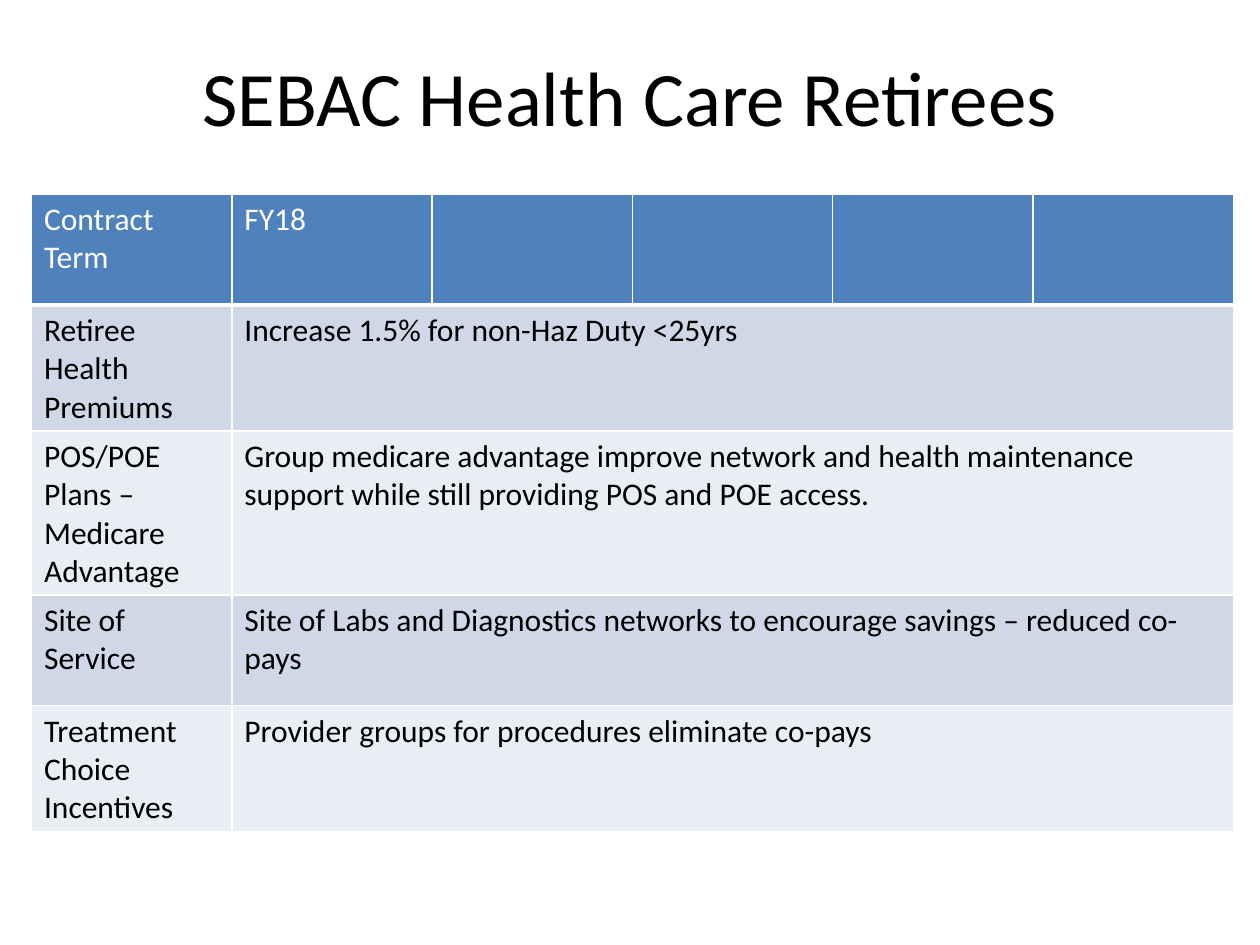
from lxml.etree import SubElement
from pptx import Presentation
from pptx.dml.color import RGBColor
from pptx.enum.text import MSO_ANCHOR, PP_ALIGN
from pptx.oxml.ns import qn
from pptx.util import Inches, Pt

FONT = "Calibri"
BLACK = RGBColor(0x00, 0x00, 0x00)
WHITE = RGBColor(0xFF, 0xFF, 0xFF)
HEADER_BLUE = RGBColor(0x4F, 0x81, 0xBD)
BANDS = (RGBColor(0xD0, 0xD8, 0xE8), RGBColor(0xE9, 0xED, 0xF4))

COLUMN_COUNT = 6
COLUMN_WIDTH = 1.59
ROW_HEIGHT = 0.88
HEADER = ["Contract Term", "FY18", "", "", "", ""]
BENEFITS = [
    ("Retiree Health Premiums", "Increase 1.5% for non-Haz Duty <25yrs"),
    ("POS/POE Plans –\nMedicare Advantage",
     "Group medicare advantage improve network and health maintenance "
     "support while still providing POS and POE access."),
    ("Site of Service",
     "Site of Labs and Diagnostics networks to encourage savings – reduced co-pays"),
    ("Treatment Choice Incentives",
     "Provider groups for procedures eliminate co-pays"),
]


def write_text(frame, text, size, color, align=PP_ALIGN.LEFT):
    """Write each line of text as a paragraph of its own."""
    for index, line in enumerate(text.split("\n")):
        para = frame.add_paragraph() if index else frame.paragraphs[0]
        para.alignment = align
        para.font.size = Pt(size)
        if line:
            span = para.add_run()
            span.text = line
            span.font.name = FONT
            span.font.size = Pt(size)
            span.font.color.rgb = color


def add_title(page, text):
    box = page.shapes.add_textbox(Inches(0.5), Inches(0.3), Inches(9), Inches(1.25))
    frame = box.text_frame
    frame.word_wrap = True
    frame.vertical_anchor = MSO_ANCHOR.TOP
    frame.margin_top = Inches(0.09)
    write_text(frame, text, 44, BLACK, PP_ALIGN.CENTER)


def set_borders(cell, bottom):
    """Draw white cell borders, which must precede the fill in the XML."""
    properties = cell._tc.get_or_add_tcPr()
    for side, width in (("L", 1), ("R", 1), ("T", 1), ("B", bottom)):
        line = SubElement(properties, qn(f"a:ln{side}"), w=str(Pt(width)))
        fill = SubElement(line, qn("a:solidFill"))
        SubElement(fill, qn("a:srgbClr"), val=str(WHITE))


def style_cell(cell, fill, bottom=1):
    set_borders(cell, bottom)
    cell.fill.solid()
    cell.fill.fore_color.rgb = fill


def add_benefit_table(page):
    row_count = len(BENEFITS) + 1
    table = page.shapes.add_table(
        row_count, COLUMN_COUNT, Inches(0.25), Inches(1.54),
        Inches(COLUMN_WIDTH * COLUMN_COUNT), Inches(ROW_HEIGHT * row_count)).table
    for column in table.columns:
        column.width = Inches(COLUMN_WIDTH)
    for row in table.rows:
        row.height = Inches(ROW_HEIGHT)

    for cell, text in zip(table.rows[0].cells, HEADER):
        style_cell(cell, HEADER_BLUE, bottom=3)
        write_text(cell.text_frame, text, 18, WHITE)

    for index, texts in enumerate(BENEFITS):
        row = index + 1
        for cell in table.rows[row].cells:
            style_cell(cell, BANDS[index % 2])
        table.cell(row, 1).merge(table.cell(row, COLUMN_COUNT - 1))
        for column, text in enumerate(texts):
            write_text(table.cell(row, column).text_frame, text, 18, BLACK)


def main():
    deck = Presentation()
    deck.slide_width = Inches(10)
    deck.slide_height = Inches(7.5)
    page = deck.slides.add_slide(deck.slide_layouts[6])
    add_title(page, "SEBAC Health Care Retirees")
    add_benefit_table(page)
    deck.save("out.pptx")


if __name__ == "__main__":
    main()
